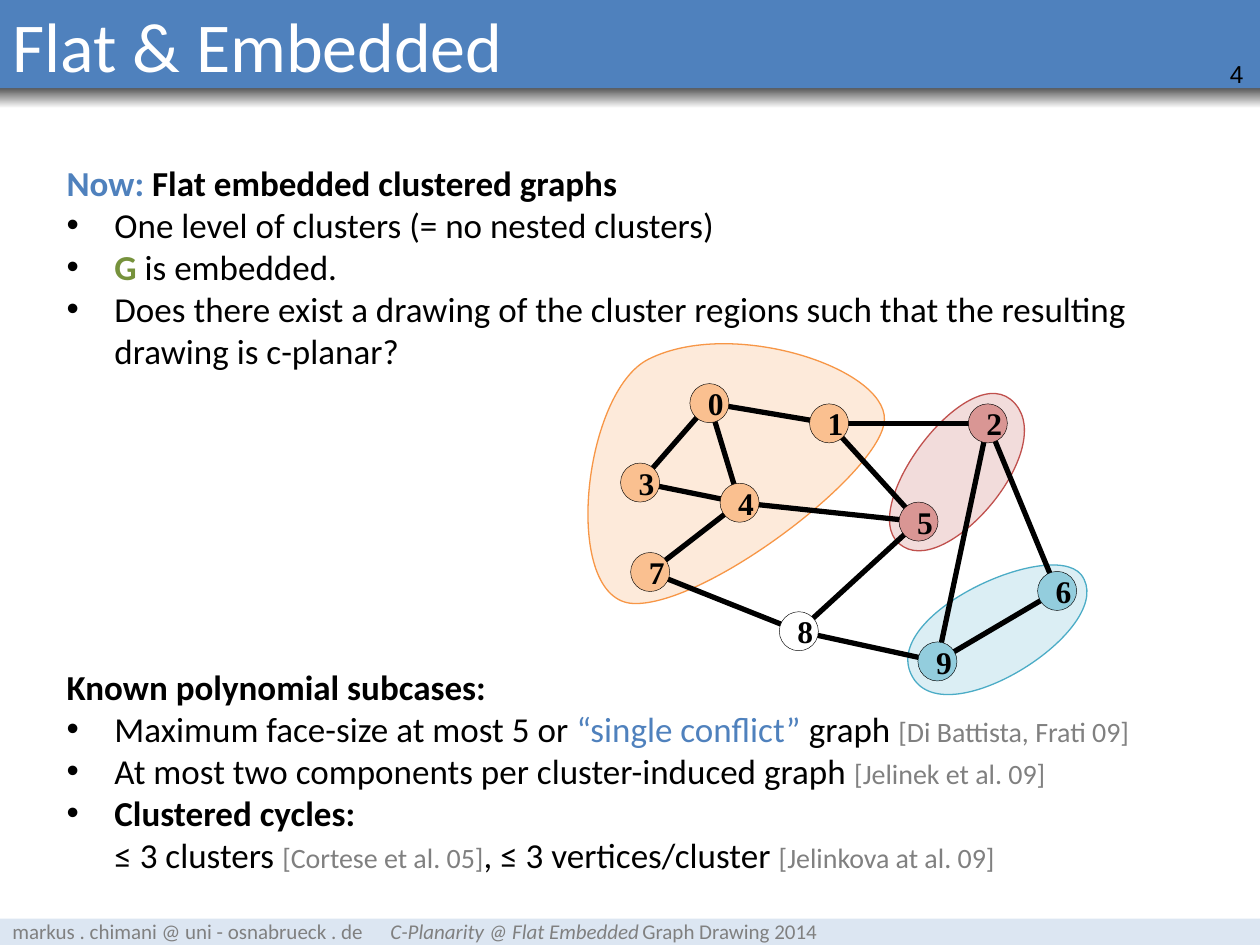
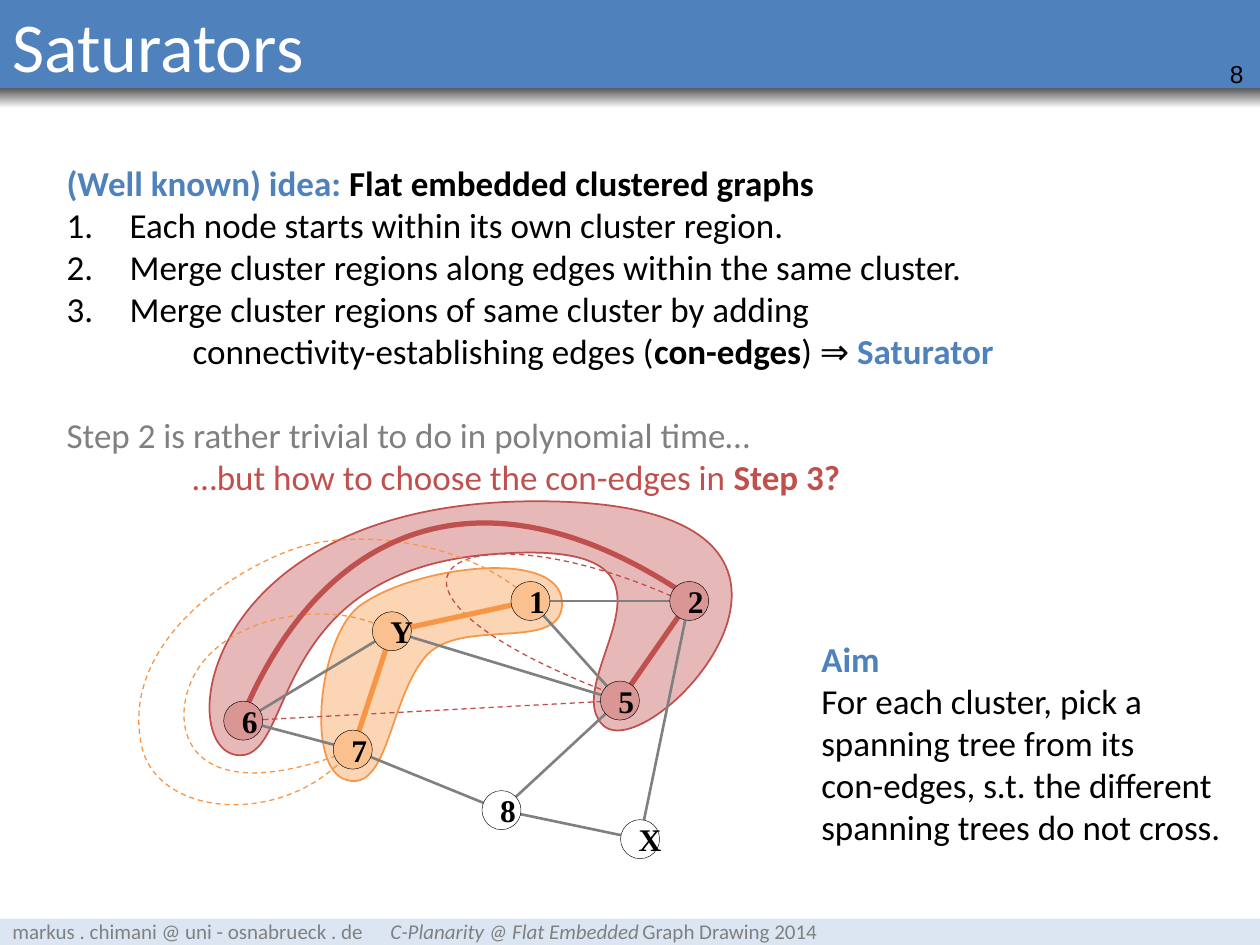
import pptx
import pptx.dml.color
import pptx.enum.dml
import pptx.enum.shapes
import pptx.enum.text
import pptx.oxml.ns
import pptx.util
from lxml import etree

Inches = pptx.util.Inches
Pt = pptx.util.Pt
SHAPE = pptx.enum.shapes.MSO_SHAPE
ALIGN = pptx.enum.text.PP_ALIGN
ANCHOR = pptx.enum.text.MSO_ANCHOR

COLORS = {
    "black": "000000", "white": "FFFFFF", "grey": "808080", "shade": "595959",
    "blue": "4F81BD", "footer": "DCE6F2", "green": "76923C",
    "red": "C0504D", "red node": "D99694", "red area": "E6B9B8", "red pale": "F2DCDB",
    "orange": "F79646", "orange node": "FAC090", "orange area": "FCD5B5",
    "orange pale": "FDEADA",
    "teal": "4BACC6", "teal node": "93CDDD", "teal pale": "DBEEF4",
}

STYLES = {
    "plain": ("black", False, 20), "bold": ("black", True, 20),
    "blue": ("blue", False, 20), "blue bold": ("blue", True, 20),
    "green bold": ("green", True, 20), "grey": ("grey", False, 20),
    "red": ("red", False, 20), "red bold": ("red", True, 20),
    "cite": ("grey", False, 16),
}

INDENTS = {
    "text": (0, 0), "bullet": (0.38, -0.38), "number": (0.5, -0.5), "deep": (1, 0),
}

LINE_HEIGHT = 24
NODE_SIZE = 0.31
CURVE_STEPS = 20

FOOTER = [("markus . chimani @ uni - osnabrueck . de\t", False),
          ("C-Planarity @ Flat Embedded", True),
          ("\tGraph Drawing 2014", False)]

FLAT = {
    "title": "Flat & Embedded",
    "number": "4",
    "texts": [((0.43, 1.23, 8.98, 5.82), [
        ("text", 0, [("Now: ", "blue bold"), ("Flat embedded clustered graphs", "bold")]),
        ("bullet", 0, [("One level of clusters (= no nested clusters)", "plain")]),
        ("bullet", 0, [("G", "green bold"), (" is embedded.", "plain")]),
        ("bullet", 0, [("Does there exist a drawing of the cluster regions such that "
                        "the resulting drawing is c-planar?", "plain")]),
        ("text", 7, [("Known polynomial subcases:", "bold")]),
        ("bullet", 0, [("Maximum face-size at most 5 or ", "plain"),
                       ("“single conflict”", "blue"), (" graph ", "plain"),
                       ("[Di Battista, Frati 09]", "cite")]),
        ("bullet", 0, [("At most two components per cluster-induced graph ", "plain"),
                       ("[Jelinek et al. 09]", "cite")]),
        ("bullet", 0, [("Clustered cycles:\n", "bold"),
                       ("≤ 3 clusters ", "plain"), ("[Cortese et al. 05]", "cite"),
                       (", ≤ 3 vertices/cluster ", "plain"),
                       ("[Jelinkova at al. 09]", "cite")]),
    ])],
    "curves": [
        ("teal pale", "teal", 0.75, False, [
            (7.26, 5.4), (7.57, 5.82), (8.89, 4.96), (8.58, 4.56),
            (8.33, 4.26), (6.91, 4.91), (7.26, 5.4)]),
        ("red pale", "red", 0.75, False, [
            (7.17, 4.34), (7.55, 4.57), (8.44, 3.51), (8.02, 3.17),
            (7.64, 2.87), (6.75, 4.1), (7.17, 4.34)]),
        ("orange pale", "orange", 0.75, False, [
            (5.15, 2.85), (5.81, 2.52), (7.03, 2.92), (7.02, 3.33),
            (7.01, 3.74), (5.61, 4.81), (5.03, 4.79),
            (4.45, 4.77), (4.62, 3.11), (5.15, 2.85)]),
    ],
    "nodes": {
        "3": (5.08, 3.83, "orange node"), "0": (5.63, 3.2, "orange node"),
        "7": (5.16, 4.54, "orange node"), "4": (5.87, 3.99, "orange node"),
        "1": (6.58, 3.36, "orange node"), "8": (6.34, 5.01, "white"),
        "5": (7.29, 4.14, "red node"), "2": (7.84, 3.36, "red node"),
        "6": (8.39, 4.69, "teal node"), "9": (7.44, 5.25, "teal node"),
    },
    "edges": [("black", 3, False,
               "30 40 10 21 51 92 62 69 98 87 47 58 34 54")],
}

SATURATORS = {
    "title": "Saturators",
    "number": "8",
    "texts": [
        ((0.43, 1.23, 8.98, 3.13), [
            ("text", 0, [("(Well known) idea: ", "blue bold"),
                         ("Flat embedded clustered graphs", "bold")]),
            ("number", 0, [("Each node starts within its own cluster region.", "plain")]),
            ("number", 0, [("Merge cluster regions along edges within the same cluster.",
                            "plain")]),
            ("number", 0, [("Merge cluster regions of same cluster by adding", "plain")]),
            ("deep", 0, [("connectivity-establishing edges (", "plain"),
                         ("con-edges", "bold"), (") ⇒ ", "plain"),
                         ("Saturator", "blue bold")]),
            ("text", 1, [("Step 2 is rather trivial to do in polynomial time…", "grey")]),
            ("deep", 0, [("…but how to choose the con-edges in ", "red"),
                         ("Step 3?", "red bold")]),
        ]),
        ((6.42, 5.01, 3.4, 1.78), [
            ("text", 0, [("Aim\n", "blue bold"),
                         ("For each cluster, pick a\nspanning tree from its\n"
                          "con-edges, s.t. the different\n"
                          "spanning trees do not cross.", "plain")]),
        ]),
    ],
    "curves": [
        ("red area", "red", 1, False, [
            (1.86, 5.99), (1.37, 5.87), (1.65, 3.92), (4.38, 3.98),
            (7.12, 4.03), (5.14, 6.14), (4.78, 5.75),
            (4.42, 5.37), (5.73, 4.25), (3.9, 4.4),
            (2.07, 4.54), (2.36, 6.1), (1.86, 5.99)]),
        ("orange area", "orange", 1, False, [
            (2.75, 6.19), (2.42, 6.1), (2.53, 5.08), (2.84, 4.82),
            (3.25, 4.5), (4.43, 4.34), (4.46, 4.77),
            (4.49, 5.2), (3.64, 4.88), (3.37, 5.22),
            (3.09, 5.56), (3.08, 6.29), (2.75, 6.19)]),
        (None, "red", 0.75, True, [
            (5.46, 4.79), (3.6, 3.92), (2.52, 4.64), (4.95, 5.54)]),
        (None, "orange", 0.75, True, [
            (3.09, 5.01), (2.66, 4.73), (1.64, 4.87), (1.48, 5.52),
            (1.38, 5.92), (1.64, 6.39), (2.75, 5.97)]),
        (None, "orange", 0.75, True, [
            (4.21, 4.76), (3.73, 4.3), (2.81, 4.17), (2.3, 4.37),
            (1.78, 4.56), (0.97, 5.13), (1.12, 5.9),
            (1.23, 6.51), (2.3, 6.57), (2.79, 5.95)]),
        (None, "red", 3, False, [
            (5.5, 4.76), (3.85, 3.62), (2.55, 4.16), (1.91, 5.72)]),
    ],
    "nodes": {
        "7": (2.8, 5.95, "orange node"), "1": (4.21, 4.77, "orange node"),
        "8": (3.98, 6.43, "white"), "5": (4.92, 5.56, "red node"),
        "6": (1.93, 5.72, "red node"), "Y": (3.11, 5.01, "orange node"),
        "2": (5.47, 4.77, "red node"), "X": (5.08, 6.66, "white"),
    },
    "edges": [("red", 0.75, True, "56"), ("red", 3, False, "25"),
              ("orange", 3, False, "1Y 7Y"),
              ("grey", 1.5, False, "5Y 6Y 76 21 51 X2 X8 87 58")],
}


def rgb(name):
    return pptx.dml.color.RGBColor.from_string(COLORS[name])


def add_xml(parent, tag, **attributes):
    return etree.SubElement(parent, pptx.oxml.ns.qn(tag), attributes)


def style_line(line, color, width, dashed=False):
    line.color.rgb = rgb(color)
    line.width = Pt(width)
    if dashed:
        line.dash_style = pptx.enum.dml.MSO_LINE.DASH


def style_span(span, color, size, bold=False, italic=False, font="Calibri"):
    span.font.name = font
    span.font.size = Pt(size)
    span.font.bold = bold
    span.font.italic = italic
    span.font.color.rgb = rgb(color)


def add_block(page, kind, place, fill):
    block = page.shapes.add_shape(kind, *map(Inches, place))
    block.shadow.inherit = False
    block.line.fill.background()
    if fill:
        block.fill.solid()
        block.fill.fore_color.rgb = rgb(fill)
    return block


def write(block, text, align, anchor, **style):
    block.text_frame.text = text
    block.text_frame.vertical_anchor = anchor
    para = block.text_frame.paragraphs[0]
    para.alignment = align
    style_span(para.runs[0], **style)


def add_frame(page, title, number):
    band = add_block(page, SHAPE.RECTANGLE, (0, 0.7, 10, 0.16), None)
    band.fill.gradient()
    band.fill.gradient_angle = 270
    for stop, color, position in zip(band.fill.gradient_stops, ("shade", "white"), (0, 1)):
        stop.color.rgb = rgb(color)
        stop.position = position

    corner = add_block(page, SHAPE.RECTANGLE, (9.61, 0, 0.31, 0.7), "blue")
    write(corner, number, ALIGN.RIGHT, ANCHOR.BOTTOM, color="black", size=14, font="Arial")
    frame = corner.text_frame
    frame.margin_left = frame.margin_top = frame.margin_bottom = 0
    frame.margin_right = Inches(0.05)
    add_block(page, SHAPE.RECTANGLE, (9.92, 0, 0.08, 0.7), "blue")

    footer = add_block(page, SHAPE.RECTANGLE, (0, 7.29, 10, 0.25), "footer")
    footer.text_frame.vertical_anchor = ANCHOR.BOTTOM
    para = footer.text_frame.paragraphs[0]
    para.alignment = ALIGN.LEFT
    tabs = add_xml(para._p.get_or_add_pPr(), "a:tabLst")
    for stop in (3, 5):
        add_xml(tabs, "a:tab", pos=str(Inches(stop)), algn="l")
    for text, italic in FOOTER:
        span = para.add_run()
        span.text = text
        style_span(span, "grey", 12, italic=italic)

    heading = add_block(page, SHAPE.RECTANGLE, (0, 0, 9.61, 0.7), "blue")
    write(heading, title, ALIGN.LEFT, ANCHOR.MIDDLE, color="white", size=40)


def add_spans(para, text, style):
    color, bold, size = STYLES[style]
    for index, line in enumerate(text.split("\n")):
        if index:
            para.add_line_break()
        if line:
            span = para.add_run()
            span.text = line
            style_span(span, color, size, bold)


def add_text(page, place, paragraphs):
    box = page.shapes.add_textbox(*map(Inches, place))
    frame = box.text_frame
    frame.word_wrap = True
    for index, (kind, gap_lines, spans) in enumerate(paragraphs):
        para = frame.add_paragraph() if index else frame.paragraphs[0]
        properties = para._p.get_or_add_pPr()
        left, first = INDENTS[kind]
        properties.set("marL", str(Inches(left)))
        properties.set("indent", str(Inches(first)))
        if kind in ("bullet", "number"):
            add_xml(add_xml(properties, "a:buClr"), "a:srgbClr", val=COLORS["black"])
        if kind == "bullet":
            add_xml(properties, "a:buFont", typeface="Arial")
            add_xml(properties, "a:buChar", char="•")
        elif kind == "number":
            add_xml(properties, "a:buFont", typeface="+mj-lt")
            add_xml(properties, "a:buAutoNum", type="arabicPeriod")
        if gap_lines:
            para.space_before = Pt(gap_lines * LINE_HEIGHT)
        for text, style in spans:
            add_spans(para, text, style)


def trace(points):
    for start in range(0, len(points) - 1, 3):
        a, b, c, d = points[start:start + 4]
        for step in range(1, CURVE_STEPS + 1):
            t = step / CURVE_STEPS
            u = 1 - t
            yield tuple(
                Inches(u**3 * a[i] + 3 * u * u * t * b[i] + 3 * u * t * t * c[i] + t**3 * d[i])
                for i in (0, 1))


def add_curve(page, fill, line, width, dashed, points):
    builder = page.shapes.build_freeform(*map(Inches, points[0]))
    builder.add_line_segments(list(trace(points)), close=False)
    curve = builder.convert_to_shape()
    outline = curve._element.find(".//" + pptx.oxml.ns.qn("a:path"))
    for segment in outline[1:]:
        outline.remove(segment)
    for index, (x, y) in enumerate(points[1:]):
        if index % 3 == 0:
            bend = add_xml(outline, "a:cubicBezTo")
        add_xml(bend, "a:pt", x=str(Inches(x) - curve.left), y=str(Inches(y) - curve.top))
    curve.shadow.inherit = False
    if fill:
        add_xml(outline, "a:close")
        curve.fill.solid()
        curve.fill.fore_color.rgb = rgb(fill)
    else:
        curve.fill.background()
    style_line(curve.line, line, width, dashed)


def add_graph(page, nodes, edge_groups):
    for color, width, dashed, pairs in edge_groups:
        for start, end in pairs.split():
            ends = nodes[start][:2] + nodes[end][:2]
            edge = page.shapes.add_connector(
                pptx.enum.shapes.MSO_CONNECTOR.STRAIGHT, *map(Inches, ends))
            style_line(edge.line, color, width, dashed)
            add_xml(edge._element.spPr, "a:effectLst")
    for label, (x, y, fill) in nodes.items():
        place = (x - NODE_SIZE / 2, y - NODE_SIZE / 2, NODE_SIZE, NODE_SIZE)
        node = add_block(page, SHAPE.OVAL, place, fill)
        style_line(node.line, "black", 0.25)
        write(node, label, ALIGN.CENTER, ANCHOR.MIDDLE,
              color="black", size=18, bold=True, font="Times New Roman")


def main():
    deck = pptx.Presentation()
    deck.slide_width, deck.slide_height = Inches(10), Inches(7.5)
    for content in (FLAT, SATURATORS):
        page = deck.slides.add_slide(deck.slide_layouts[6])
        add_frame(page, content["title"], content["number"])
        for curve in content["curves"]:
            add_curve(page, *curve)
        for place, paragraphs in content["texts"]:
            add_text(page, place, paragraphs)
        add_graph(page, content["nodes"], content["edges"])
    deck.save("out.pptx")


if __name__ == "__main__":
    main()
